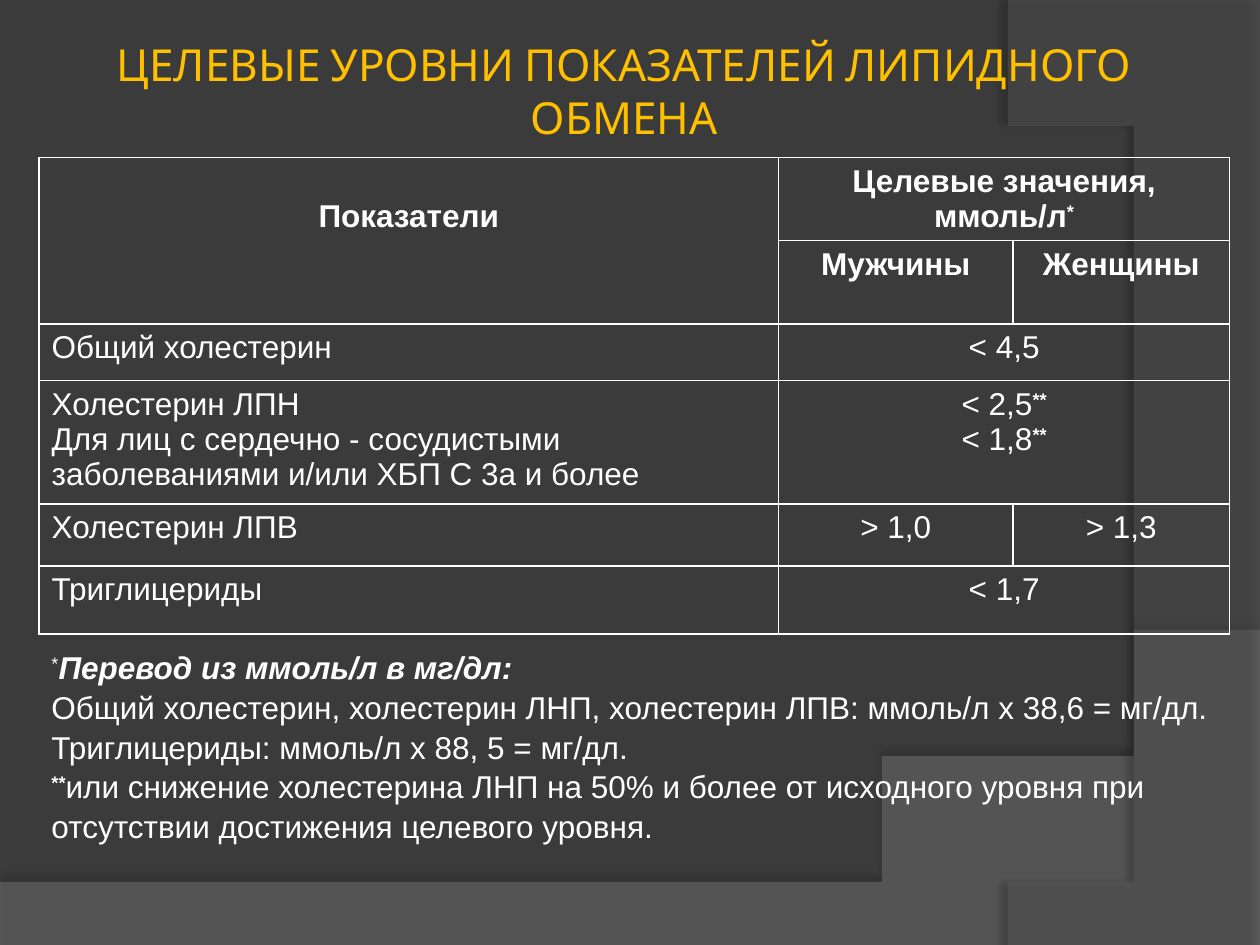
from lxml import etree
from pptx import Presentation
from pptx import util as u
from pptx.dml import color
from pptx.enum import text
from pptx.oxml import ns, parse_xml

COLORS = {
    "background": "3B3B3B",
    "title": "FFC000",
    "text": "FFFFFF",
    "lower_wave": "7F7F7F",
    "right_wave": "5E5E5E",
    "shadow": "000000",
}
CENTER = text.PP_ALIGN.CENTER
LEFT = text.PP_ALIGN.LEFT


def rgb(name):
    return color.RGBColor.from_string(COLORS[name])


def bezier(start, first, second, end, steps=60):
    points = []
    for step in range(steps + 1):
        t = step / steps
        weights = ((1 - t) ** 3, 3 * t * (1 - t) ** 2, 3 * t**2 * (1 - t), t**3)
        points.append(tuple(
            sum(weight * point[axis] for weight, point in zip(weights, (start, first, second, end)))
            for axis in (0, 1)
        ))
    return points


class SlideBuilder:
    font = "Arial"
    size = u.Pt(18)

    def __init__(self, presentation):
        self.slide = presentation.slides.add_slide(presentation.slide_layouts[5])
        fill = self.slide.background.fill
        fill.solid()
        fill.fore_color.rgb = rgb("background")

    def wave(self, points, fill, alpha, shadow_alpha, distance, direction):
        builder = self.slide.shapes.build_freeform(*points[0], scale=u.Inches(1))
        builder.add_line_segments(points[1:], close=True)
        shape = builder.convert_to_shape()
        shape.line.fill.background()
        shape.fill.solid()
        shape.fill.fore_color.rgb = rgb(fill)
        fill_color = shape.element.spPr.find(".//" + ns.qn("a:srgbClr"))
        etree.SubElement(fill_color, ns.qn("a:alpha"), val=str(alpha * 1000))
        shape.element.spPr.append(parse_xml(
            f'<a:effectLst {ns.nsdecls("a")}><a:outerShdw blurRad="{u.Pt(4)}" '
            f'dist="{u.Pt(distance)}" dir="{direction * 60000}" rotWithShape="0">'
            f'<a:srgbClr val="{COLORS["shadow"]}"><a:alpha val="{shadow_alpha * 1000}"/>'
            "</a:srgbClr></a:outerShdw></a:effectLst>"
        ))

    def title(self, wording, left, top, width, height):
        shape = self.slide.shapes.title
        shape.element.getparent().append(shape.element)
        shape.left, shape.top = u.Inches(left), u.Inches(top)
        shape.width, shape.height = u.Inches(width), u.Inches(height)
        frame = shape.text_frame
        frame.text = wording
        frame.word_wrap = True
        frame.auto_size = text.MSO_AUTO_SIZE.NONE
        frame.vertical_anchor = text.MSO_ANCHOR.TOP
        frame.margin_left = frame.margin_right = u.Inches(0.05)
        frame.margin_top = frame.margin_bottom = 0
        paragraph = frame.paragraphs[0]
        paragraph.alignment = CENTER
        paragraph.font.name = "Cabin"
        paragraph.font.size = u.Pt(25.2)
        paragraph.font.color.rgb = rgb("title")

    def fill_text(self, frame, paragraphs, alignment=LEFT, bold=False, spacing=None):
        for index, runs in enumerate(paragraphs):
            paragraph = frame.add_paragraph() if index else frame.paragraphs[0]
            paragraph.alignment = alignment
            paragraph.line_spacing = spacing
            font = paragraph.font
            font.name, font.size, font.bold = self.font, self.size, bold
            font.color.rgb = rgb("text")
            for wording, style in runs:
                run = paragraph.add_run()
                run.text = wording
                if "b" in style:
                    run.font.bold = True
                if "i" in style:
                    run.font.italic = True
                if "^" in style:
                    run._r.get_or_add_rPr().set("baseline", "30000")

    def border(self, cell):
        properties = cell._tc.get_or_add_tcPr()
        for index, side in enumerate(("lnL", "lnR", "lnT", "lnB")):
            properties.insert(index, parse_xml(
                f'<a:{side} {ns.nsdecls("a")} w="{u.Pt(1)}"><a:solidFill>'
                f'<a:srgbClr val="{COLORS["text"]}"/></a:solidFill></a:{side}>'
            ))

    def table(self, left, top, columns, rows, merges, contents):
        table = self.slide.shapes.add_table(
            len(rows), len(columns), u.Inches(left), u.Inches(top),
            u.Inches(sum(columns)), u.Inches(sum(rows)),
        ).table
        table.first_row = table.horz_banding = False
        for column, width in zip(table.columns, columns):
            column.width = u.Inches(width)
        for row, height in zip(table.rows, rows):
            row.height = u.Inches(height)
        for cell in table.iter_cells():
            cell.fill.background()
            self.border(cell)
        for first, last in merges:
            table.cell(*first).merge(table.cell(*last))
        for (row, column), paragraphs in contents.items():
            header = row < 2
            alignment = CENTER if header or column else LEFT
            self.fill_text(table.cell(row, column).text_frame, paragraphs, alignment, header)
        return table

    def note(self, paragraphs, left, top, width, height):
        box = self.slide.shapes.add_textbox(*map(u.Inches, (left, top, width, height)))
        box.text_frame.word_wrap = True
        self.fill_text(box.text_frame, paragraphs, spacing=1.05)


def main():
    presentation = Presentation()
    presentation.slide_width, presentation.slide_height = u.Inches(10), u.Inches(7.5)
    builder = SlideBuilder(presentation)

    lower_curve = bezier((10, 5.2), (5.59, 7.29), (3.91, 7.19), (0, 7.05))
    builder.wave([(0, 7.5), (10, 7.5)] + lower_curve, "lower_wave", 45, 35, 3.5, 270)
    right_curve = bezier((8.21, 7.5), (9.35, 6.19), (10.18, 3), (8, 0))
    builder.wave([(10, 0.02), (10, 7.5)] + right_curve, "right_wave", 40, 45, 4, 180)

    builder.title("ЦЕЛЕВЫЕ УРОВНИ ПОКАЗАТЕЛЕЙ ЛИПИДНОГО ОБМЕНА", 0.23, 0.3, 9.45, 1.25)

    contents = {
        (0, 0): [[("Показатели", "")]],
        (0, 1): [[("Целевые значения, ммоль/л", ""), ("*", "^")]],
        (1, 1): [[("Мужчины", "")]],
        (1, 2): [[("Женщины", "")]],
        (2, 0): [[("Общий холестерин", "")]],
        (2, 1): [[("< 4,5", "")]],
        (3, 0): [
            [("Холестерин ЛПН", "")],
            [("Для лиц с сердечно - сосудистыми заболеваниями и/или ХБП С 3а и более", "")],
        ],
        (3, 1): [[("< 2,5", ""), ("**", "b^")], [("< 1,8", ""), ("**", "b^")]],
        (4, 0): [[("Холестерин ЛПВ", "")]],
        (4, 1): [[("> 1,0", "")]],
        (4, 2): [[("> 1,3", "")]],
        (5, 0): [[("Триглицериды", "")]],
        (5, 1): [[("< 1,7", "")]],
    }
    merges = [((0, 0), (1, 0))] + [((row, 1), (row, 2)) for row in (0, 2, 3, 5)]
    table = builder.table(
        0.31, 1.25, (5.87, 1.86, 1.72), (0.66, 0.66, 0.45, 0.98, 0.49, 0.54), merges, contents
    )
    table.cell(0, 0).margin_top = u.Inches(0.33)

    builder.note([
        [("*", "^"), ("Перевод из ммоль/л в мг/дл:", "bi")],
        [("Общий холестерин, холестерин ЛНП, холестерин ЛПВ: ммоль/л х 38,6 = мг/дл.", "")],
        [("Триглицериды: ммоль/л х 88, 5 = мг/дл.", "")],
        [("**", "b^"), ("или снижение холестерина ЛНП на 50% и более от исходного уровня при "
                        "отсутствии достижения целевого уровня.", "")],
    ], 0.31, 5.08, 9.45, 1.62)

    presentation.save("out.pptx")


if __name__ == "__main__":
    main()
